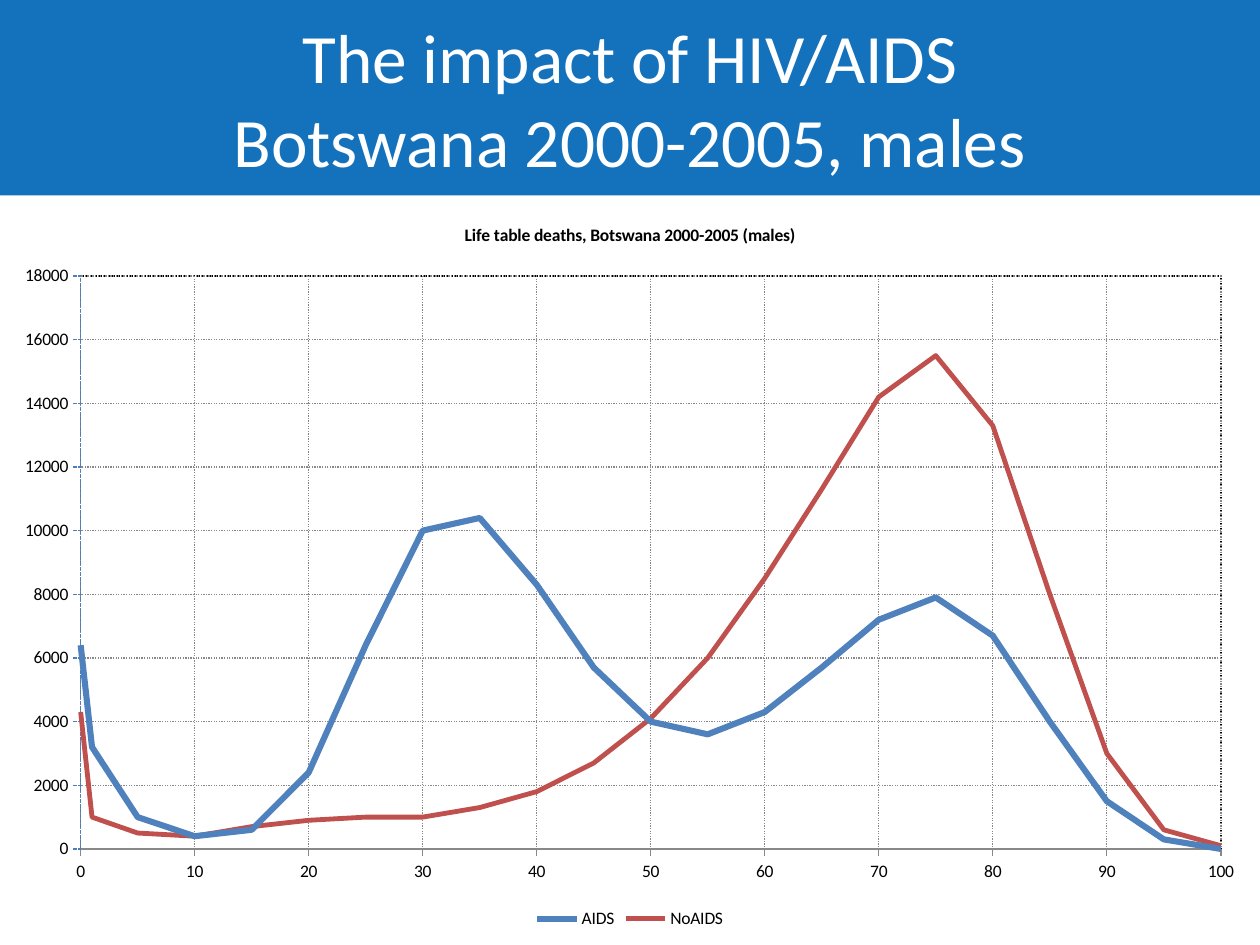
from dataclasses import dataclass

from lxml.etree import SubElement
from pptx import Presentation
from pptx.chart.data import XyChartData
from pptx.dml.color import RGBColor
from pptx.enum.chart import XL_CHART_TYPE, XL_LEGEND_POSITION, XL_TICK_MARK
from pptx.enum.dml import MSO_LINE
from pptx.enum.text import MSO_ANCHOR, MSO_AUTO_SIZE, PP_ALIGN
from pptx.oxml import parse_xml
from pptx.oxml.ns import nsdecls, qn
from pptx.util import Cm, Pt

FONT = "Calibri"
COLORS = {
    "banner": "1472BC",
    "white": "FFFFFF",
    "text": "000000",
    "grid": "888888",
    "age_zero": "4B7EBC",
    "aids": "4F81BD",
    "no_aids": "C0504D",
}
AGES = [0, 1, *range(5, 101, 5)]
PLOT_LAYOUT = {"x": 0.064, "y": 0.105, "w": 0.905, "h": 0.78}


@dataclass
class DeathCurve:
    name: str
    color: str
    width: float
    deaths: list[int]


@dataclass
class AxisStyle:
    maximum: int
    step: int
    line_color: str
    dash: MSO_LINE


CURVES = [
    DeathCurve("AIDS", "aids", 3.5,
               [6400, 3200, 1000, 400, 600, 2400, 6400, 10000, 10400, 8300, 5700,
                4000, 3600, 4300, 5700, 7200, 7900, 6700, 4000, 1500, 300, 0]),
    DeathCurve("NoAIDS", "no_aids", 2.75,
               [4300, 1000, 500, 400, 700, 900, 1000, 1000, 1300, 1800, 2700,
                4100, 6000, 8500, 11300, 14200, 15500, 13300, 8000, 3000, 600, 100]),
]
AGE_AXIS = AxisStyle(100, 10, "grid", MSO_LINE.SOLID)
DEATH_AXIS = AxisStyle(18000, 2000, "age_zero", MSO_LINE.SQUARE_DOT)


def rgb(name: str) -> RGBColor:
    return RGBColor.from_string(COLORS[name])


def apply_format(target, values: dict) -> None:
    for name, value in values.items():
        setattr(target, name, value)


def style_font(font, size: float, color: str, bold: bool = False) -> None:
    apply_format(font, {"name": FONT, "size": Pt(size), "bold": bold})
    font.color.rgb = rgb(color)


def style_line(line, color: str, width: float, dash=MSO_LINE.SOLID) -> None:
    line.color.rgb = rgb(color)
    apply_format(line, {"width": Pt(width), "dash_style": dash})


def add_banner(page, text: str) -> None:
    banner = page.shapes.title
    apply_format(banner, {"left": Cm(0), "top": Cm(0),
                          "width": Cm(25.4), "height": Cm(3.94)})
    banner.fill.solid()
    banner.fill.fore_color.rgb = rgb("banner")
    frame = banner.text_frame
    frame.text = text
    apply_format(frame, {"word_wrap": True, "auto_size": MSO_AUTO_SIZE.NONE,
                         "vertical_anchor": MSO_ANCHOR.MIDDLE})
    para = frame.paragraphs[0]
    para.alignment = PP_ALIGN.CENTER
    for span in para.runs:
        style_font(span.font, 39.6, "white")


def style_axis(axis, style: AxisStyle) -> None:
    apply_format(axis, {
        "minimum_scale": 0, "maximum_scale": style.maximum,
        "major_unit": style.step, "has_major_gridlines": True,
        "major_tick_mark": XL_TICK_MARK.OUTSIDE,
        "minor_tick_mark": XL_TICK_MARK.NONE,
    })
    apply_format(axis.tick_labels, {"number_format": "0",
                                    "number_format_is_linked": False})
    style_font(axis.tick_labels.font, 10, "text")
    style_line(axis.format.line, style.line_color, 0.75, style.dash)
    style_line(axis.major_gridlines.format.line, "grid", 0.75, MSO_LINE.ROUND_DOT)


def frame_plot_area(chart) -> None:
    """Fix the inner plot position and give it a dotted border."""
    plot_area = chart._chartSpace.chart.plotArea
    for old in plot_area.findall(qn("c:layout")):
        plot_area.remove(old)
    layout = parse_xml(f"<c:layout {nsdecls('c')}><c:manualLayout/></c:layout>")
    settings = {"layoutTarget": "inner", "xMode": "edge", "yMode": "edge", **PLOT_LAYOUT}
    for tag, value in settings.items():
        SubElement(layout[0], qn(f"c:{tag}")).set("val", str(value))
    plot_area.insert(0, layout)
    plot_area.append(parse_xml(
        f'<c:spPr {nsdecls("c", "a")}><a:noFill/><a:ln w="9525"><a:solidFill>'
        f'<a:srgbClr val="{COLORS["text"]}"/></a:solidFill>'
        '<a:prstDash val="sysDot"/></a:ln></c:spPr>'))


def add_death_chart(page, title: str) -> None:
    data = XyChartData()
    for curve in CURVES:
        series = data.add_series(curve.name)
        for age, deaths in zip(AGES, curve.deaths):
            series.add_data_point(age, deaths)
    chart = page.shapes.add_chart(
        XL_CHART_TYPE.XY_SCATTER_SMOOTH_NO_MARKERS,
        Cm(0), Cm(4.01), Cm(25.4), Cm(14.81), data).chart
    style_font(chart.font, 10, "text")
    chart.plots[0].vary_by_categories = False

    chart.has_title = True
    chart.chart_title.text_frame.text = title
    span = chart.chart_title.text_frame.paragraphs[0].runs[0]
    style_font(span.font, 10, "text", bold=True)

    chart.has_legend = True
    apply_format(chart.legend, {"position": XL_LEGEND_POSITION.BOTTOM,
                                "include_in_layout": False})
    style_font(chart.legend.font, 10, "text")

    style_axis(chart.category_axis, AGE_AXIS)
    style_axis(chart.value_axis, DEATH_AXIS)
    for series, curve in zip(chart.plots[0].series, CURVES):
        series.smooth = True
        style_line(series.format.line, curve.color, curve.width)
    frame_plot_area(chart)


def main() -> None:
    deck = Presentation()
    apply_format(deck, {"slide_width": Cm(25.4), "slide_height": Cm(19.05)})
    page = deck.slides.add_slide(deck.slide_layouts.get_by_name("Title Only"))
    add_banner(page, "The impact of HIV/AIDS\vBotswana 2000-2005, males")
    add_death_chart(page, "Life table deaths, Botswana 2000-2005 (males)")
    deck.save("out.pptx")


if __name__ == "__main__":
    main()
